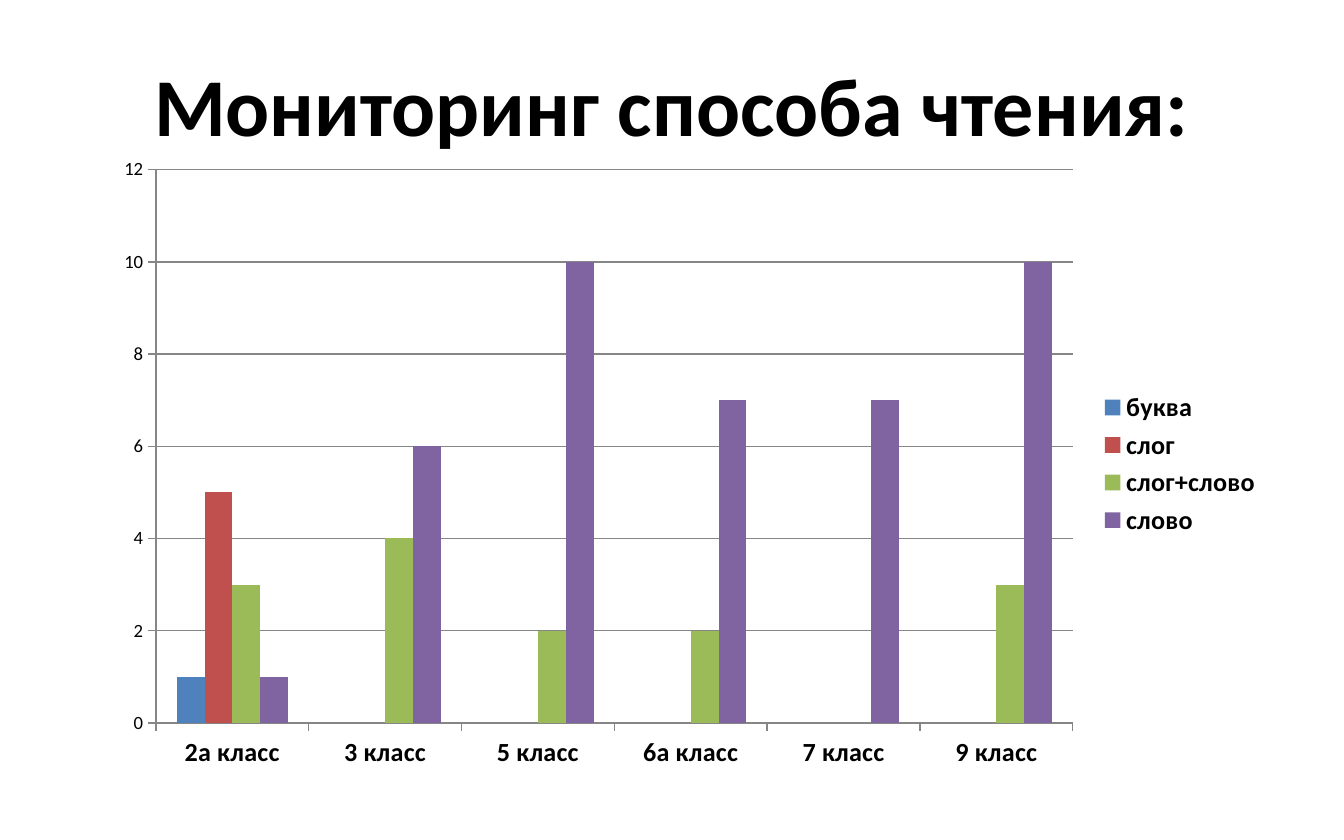
from pptx import Presentation
from pptx.chart.data import CategoryChartData
from pptx.dml.color import RGBColor
from pptx.enum.chart import XL_CHART_TYPE, XL_LEGEND_POSITION, XL_TICK_MARK
from pptx.enum.text import MSO_ANCHOR, PP_ALIGN
from pptx.util import Pt

COLUMNS = XL_CHART_TYPE.COLUMN_CLUSTERED
LEGEND_RIGHT = XL_LEGEND_POSITION.RIGHT
TICK_OUTSIDE = XL_TICK_MARK.OUTSIDE
TICK_NONE = XL_TICK_MARK.NONE
MIDDLE = MSO_ANCHOR.MIDDLE
CENTER = PP_ALIGN.CENTER

FONT = "Calibri"
BLACK = RGBColor(0x00, 0x00, 0x00)
GRAY = RGBColor(0x86, 0x86, 0x86)
BLUE = RGBColor(0x4F, 0x81, 0xBD)
RED = RGBColor(0xC0, 0x50, 0x4D)
GREEN = RGBColor(0x9B, 0xBB, 0x59)
PURPLE = RGBColor(0x80, 0x64, 0xA2)

CLASSES = ["2а класс", "3 класс", "5 класс", "6а класс", "7 класс", "9 класс"]
READING_MODES = [
    ("буква", [1, None, None, None, None, None], BLUE),
    ("слог", [5, None, None, None, None, None], RED),
    ("слог+слово", [3, 4, 2, 2, None, 3], GREEN),
    ("слово", [1, 6, 10, 7, 7, 10], PURPLE),
]


def set_font(font, size, bold=False):
    font.name = FONT
    font.size = Pt(size)
    font.bold = bold
    font.color.rgb = BLACK


def set_line(line):
    line.color.rgb = GRAY
    line.width = Pt(0.75)


def add_title(slide, text):
    tf = slide.shapes.add_textbox(Pt(36), Pt(18), Pt(648), Pt(75)).text_frame
    tf.word_wrap = True
    tf.vertical_anchor = MIDDLE
    p = tf.paragraphs[0]
    p.text = text
    p.alignment = CENTER
    set_font(p.font, 44, bold=True)


def style_axis(axis, size, bold=False):
    axis.major_tick_mark = TICK_OUTSIDE
    axis.minor_tick_mark = TICK_NONE
    set_line(axis.format.line)
    set_font(axis.tick_labels.font, size, bold)


def add_reading_chart(slide):
    data = CategoryChartData()
    data.categories = CLASSES
    for name, values, _ in READING_MODES:
        data.add_series(name, values)
    chart = slide.shapes.add_chart(
        COLUMNS, Pt(54), Pt(78.5), Pt(629), Pt(340), data).chart
    chart.has_title = False
    set_font(chart.font, 10)

    plot = chart.plots[0]
    plot.gap_width = 150
    plot.overlap = 0
    plot.vary_by_categories = False
    for series, (_, _, color) in zip(plot.series, READING_MODES):
        series.format.fill.solid()
        series.format.fill.fore_color.rgb = color

    style_axis(chart.category_axis, 14, bold=True)
    value_axis = chart.value_axis
    style_axis(value_axis, 10)
    value_axis.minimum_scale = 0
    value_axis.maximum_scale = 12
    value_axis.major_unit = 2
    value_axis.has_major_gridlines = True
    set_line(value_axis.major_gridlines.format.line)

    chart.has_legend = True
    chart.legend.position = LEGEND_RIGHT
    chart.legend.include_in_layout = False
    set_font(chart.legend.font, 14, bold=True)


def main():
    prs = Presentation()
    prs.slide_width = Pt(720)
    prs.slide_height = Pt(450)
    slide = prs.slides.add_slide(prs.slide_layouts[6])
    add_title(slide, "Мониторинг способа чтения:")
    add_reading_chart(slide)
    prs.save("out.pptx")


if __name__ == "__main__":
    main()
